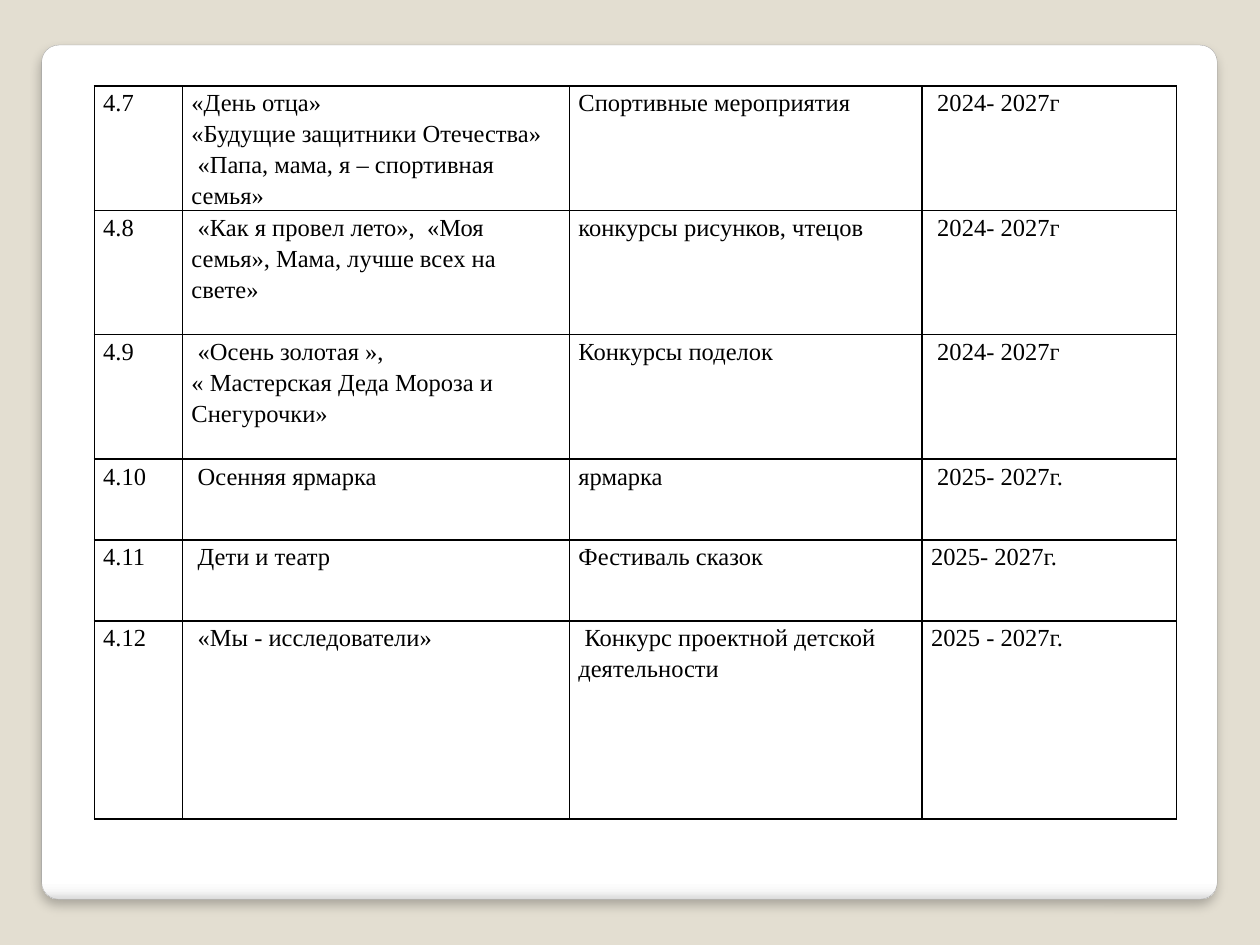
import pptx
import pptx.dml.color
import pptx.enum.shapes
import pptx.oxml
import pptx.oxml.ns
import pptx.util
from pptx.util import Cm

# Content: number, theme, form, years
ROWS = [
    ("4.7", "«День отца»\n«Будущие защитники Отечества»\n «Папа, мама, я – спортивная семья»",
     "Спортивные мероприятия", " 2024- 2027г"),
    ("4.8", " «Как я провел лето»,  «Моя семья», Мама, лучше всех на свете»",
     "конкурсы рисунков, чтецов", " 2024- 2027г"),
    ("4.9", " «Осень золотая »,\n« Мастерская Деда Мороза и Снегурочки»",
     "Конкурсы поделок", " 2024- 2027г"),
    ("4.10", " Осенняя ярмарка", "ярмарка", " 2025- 2027г."),
    ("4.11", " Дети и театр", "Фестиваль сказок", "2025- 2027г."),
    ("4.12", " «Мы - исследователи»",
     " Конкурс проектной детской деятельности", "2025 - 2027г."),
]
WIDTHS = [1.78, 7.8, 7.11, 5.13]
HEIGHTS = [2.51, 2.51, 2.51, 1.63, 1.63, 3.99]

THEME = {
    "back": "E3DED1", "edge": "A4A4A4", "ink": "000000",
    "fade": [(0, "FFFFFF"), (98, "FFFFFF"), (99, "F7F7F7"), (100, "DADADA")],
    "font": "Times New Roman", "size": 14, "space": 1.15,
}
NS = pptx.oxml.ns.nsdecls("a")


def color(name):
    return pptx.dml.color.RGBColor.from_string(THEME[name])


def draw_card(slide):
    card = slide.shapes.add_shape(
        pptx.enum.shapes.MSO_SHAPE.ROUNDED_RECTANGLE,
        Cm(0.84), Cm(0.91), Cm(23.7), Cm(17.22))
    card.adjustments[0] = 0.02
    card.line.color.rgb = color("edge")
    card.line.width = pptx.util.Pt(0.16)

    # Fade along the lower edge
    card.fill.gradient()
    card.fill.gradient_angle = 270
    stops = card.element.spPr.find(".//" + pptx.oxml.ns.qn("a:gsLst"))
    for stop in list(stops):
        stops.remove(stop)
    for place, tone in THEME["fade"]:
        stops.append(pptx.oxml.parse_xml(
            f'<a:gs {NS} pos="{place * 1000}"><a:srgbClr val="{tone}"/></a:gs>'))

    # Soft shadow below
    card.shadow.inherit = False
    glow = card.element.spPr.find(pptx.oxml.ns.qn("a:effectLst"))
    glow.append(pptx.oxml.parse_xml(
        f'<a:outerShdw {NS} blurRad="{pptx.util.Pt(6)}" dist="{pptx.util.Pt(4)}" '
        f'dir="5400000" algn="t" rotWithShape="0"><a:srgbClr val="{THEME["ink"]}">'
        '<a:alpha val="25000"/></a:srgbClr></a:outerShdw>'))


def style_cell(cell):
    cell.margin_left = cell.margin_right = Cm(0.18)
    cell.margin_top = cell.margin_bottom = 0
    props = cell._tc.get_or_add_tcPr()
    for side in "LRTB":
        props.append(pptx.oxml.parse_xml(
            f'<a:ln{side} {NS} w="{pptx.util.Pt(1)}"><a:solidFill>'
            f'<a:srgbClr val="{THEME["ink"]}"/></a:solidFill></a:ln{side}>'))
    cell.fill.background()
    for para in cell.text_frame.paragraphs:
        para.line_spacing = THEME["space"]
        for run in para.runs:
            run.font.name = THEME["font"]
            run.font.size = pptx.util.Pt(THEME["size"])
            run.font.color.rgb = color("ink")


def draw_table(slide):
    table = slide.shapes.add_table(
        len(ROWS), len(WIDTHS), Cm(1.9), Cm(1.73),
        Cm(sum(WIDTHS)), Cm(sum(HEIGHTS))).table
    table.first_row = table.horz_banding = False
    for col, width in zip(table.columns, WIDTHS):
        col.width = Cm(width)
    for row, height, texts in zip(table.rows, HEIGHTS, ROWS):
        row.height = Cm(height)
        for cell, text in zip(row.cells, texts):
            cell.text_frame.text = text
            style_cell(cell)


def main():
    deck = pptx.Presentation()
    deck.slide_width, deck.slide_height = Cm(25.4), Cm(19.05)
    slide = deck.slides.add_slide(deck.slide_layouts[6])
    slide.background.fill.solid()
    slide.background.fill.fore_color.rgb = color("back")
    draw_card(slide)
    draw_table(slide)
    deck.save("out.pptx")


if __name__ == "__main__":
    main()
